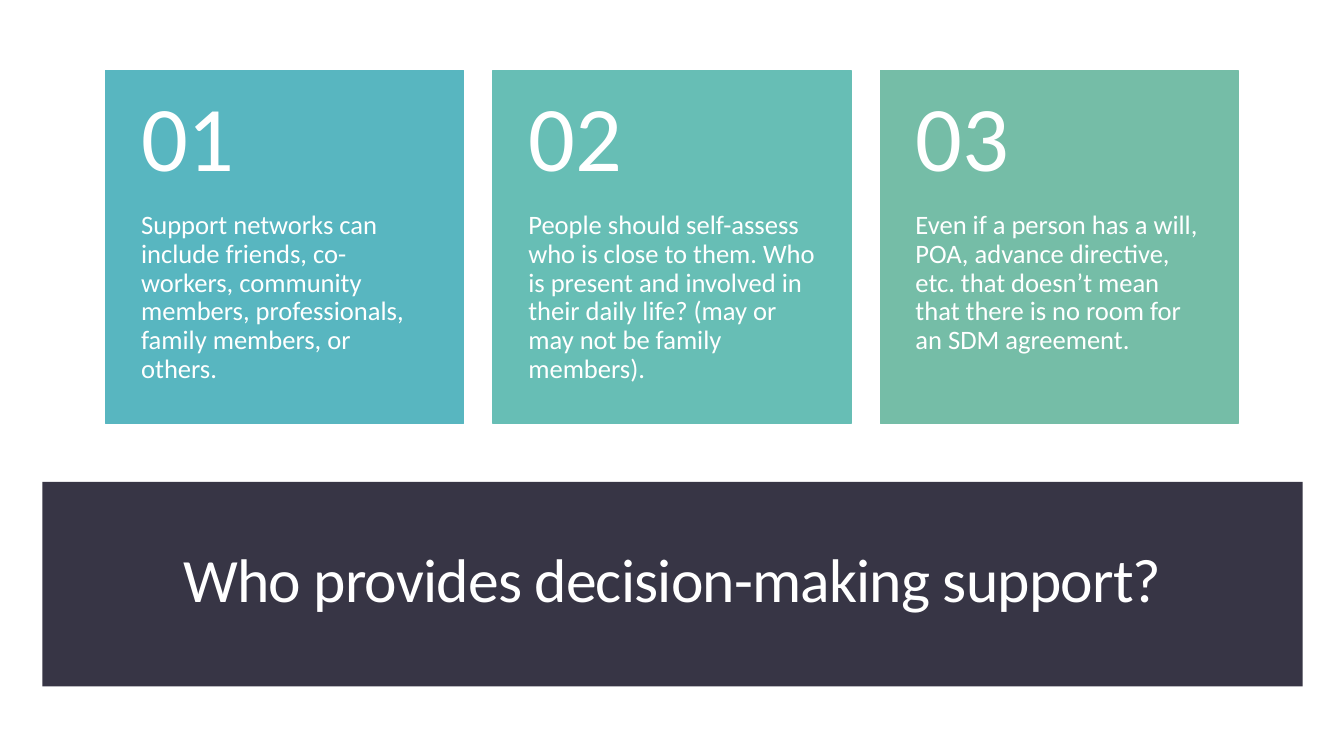
from dataclasses import dataclass

from pptx import Presentation
from pptx.dml.color import RGBColor
from pptx.enum.shapes import MSO_SHAPE as Preset
from pptx.enum.text import MSO_ANCHOR as Anchor, MSO_AUTO_SIZE as AutoSize, PP_ALIGN as Align
from pptx.shapes.autoshape import Shape
from pptx.slide import Slide
from pptx.text.text import TextFrame
from pptx.util import Inches, Pt

WHITE = RGBColor(0xFF, 0xFF, 0xFF)
DARK = RGBColor(0x37, 0x35, 0x45)
BLUE = RGBColor(0x58, 0xB6, 0xC0)
TEAL = RGBColor(0x67, 0xBE, 0xB5)
GREEN = RGBColor(0x75, 0xBD, 0xA7)
FONT = "Calibri"

CARD_LEFT, CARD_TOP = 1.05, 0.7
CARD_WIDTH, CARD_HEIGHT = 3.55, 3.5
CARD_STEP = 3.84
NUMBER_HEIGHT = 1.4
CARD_INSET = 0.35


@dataclass(frozen=True)
class Card:
    message: str
    color: RGBColor


CARDS = [
    Card("Support networks can include friends, co-workers, community members, "
         "professionals, family members, or others.", BLUE),
    Card("People should self-assess who is close to them. Who is present and involved "
         "in their daily life? (may or may not be family members).", TEAL),
    Card("Even if a person has a will, POA, advance directive, etc. that doesn’t mean "
         "that there is no room for an SDM agreement.", GREEN),
]


def write(frame: TextFrame, text: str, *, size: float, align: Align = Align.LEFT,
          anchor: Anchor = Anchor.TOP, side: float = 0.1, top: float = 0.05,
          bottom: float = 0.05, tracking: float = 0) -> None:
    """Fill a text frame with one formatted paragraph."""
    frame.word_wrap = True
    frame.auto_size = AutoSize.NONE
    frame.vertical_anchor = anchor
    frame.margin_left = frame.margin_right = Inches(side)
    frame.margin_top, frame.margin_bottom = Inches(top), Inches(bottom)
    paragraph = frame.paragraphs[0]
    paragraph.alignment = align
    paragraph.line_spacing = 0.9
    run = paragraph.add_run()
    run.text = text
    run.font.name = FONT
    run.font.size = Pt(size)
    run.font.color.rgb = WHITE
    if tracking:
        run._r.get_or_add_rPr().set("spc", str(round(tracking * 100)))


def add_block(slide: Slide, left: float, top: float, width: float, height: float,
              color: RGBColor, outlined: bool = False) -> Shape:
    block = slide.shapes.add_shape(
        Preset.RECTANGLE, Inches(left), Inches(top), Inches(width), Inches(height))
    block.shadow.inherit = False
    block.fill.solid()
    block.fill.fore_color.rgb = color
    if outlined:
        block.line.color.rgb = color
        block.line.width = Pt(0.85)
    else:
        block.line.fill.background()
    return block


def add_card(slide: Slide, index: int, card: Card) -> None:
    left = CARD_LEFT + index * CARD_STEP
    add_block(slide, left, CARD_TOP, CARD_WIDTH, CARD_HEIGHT, card.color, outlined=True)
    message = slide.shapes.add_textbox(
        Inches(left), Inches(CARD_TOP + NUMBER_HEIGHT),
        Inches(CARD_WIDTH), Inches(CARD_HEIGHT - NUMBER_HEIGHT))
    write(message.text_frame, card.message, size=19, side=CARD_INSET, top=0, bottom=0.36)
    number = slide.shapes.add_textbox(
        Inches(left), Inches(CARD_TOP), Inches(CARD_WIDTH), Inches(NUMBER_HEIGHT))
    write(number.text_frame, f"{index + 1:02}", size=66, anchor=Anchor.MIDDLE,
          side=CARD_INSET, top=0.18, bottom=0.18)


def main() -> None:
    deck = Presentation()
    deck.slide_width, deck.slide_height = Inches(13.33), Inches(7.5)
    slide = deck.slides.add_slide(deck.slide_layouts[5])

    # Title on its dark band
    title = slide.shapes.title
    title.left, title.top = Inches(0.61), Inches(5.03)
    title.width, title.height = Inches(12.12), Inches(1.49)
    write(title.text_frame, "Who provides decision-making support?", size=44,
          align=Align.CENTER, anchor=Anchor.MIDDLE, tracking=-0.6)
    band = add_block(slide, 0.42, 4.78, 12.5, 2.03, DARK)
    title._element.addprevious(band._element)

    # Numbered cards
    for index, card in enumerate(CARDS):
        add_card(slide, index, card)

    deck.save("out.pptx")


if __name__ == "__main__":
    main()
